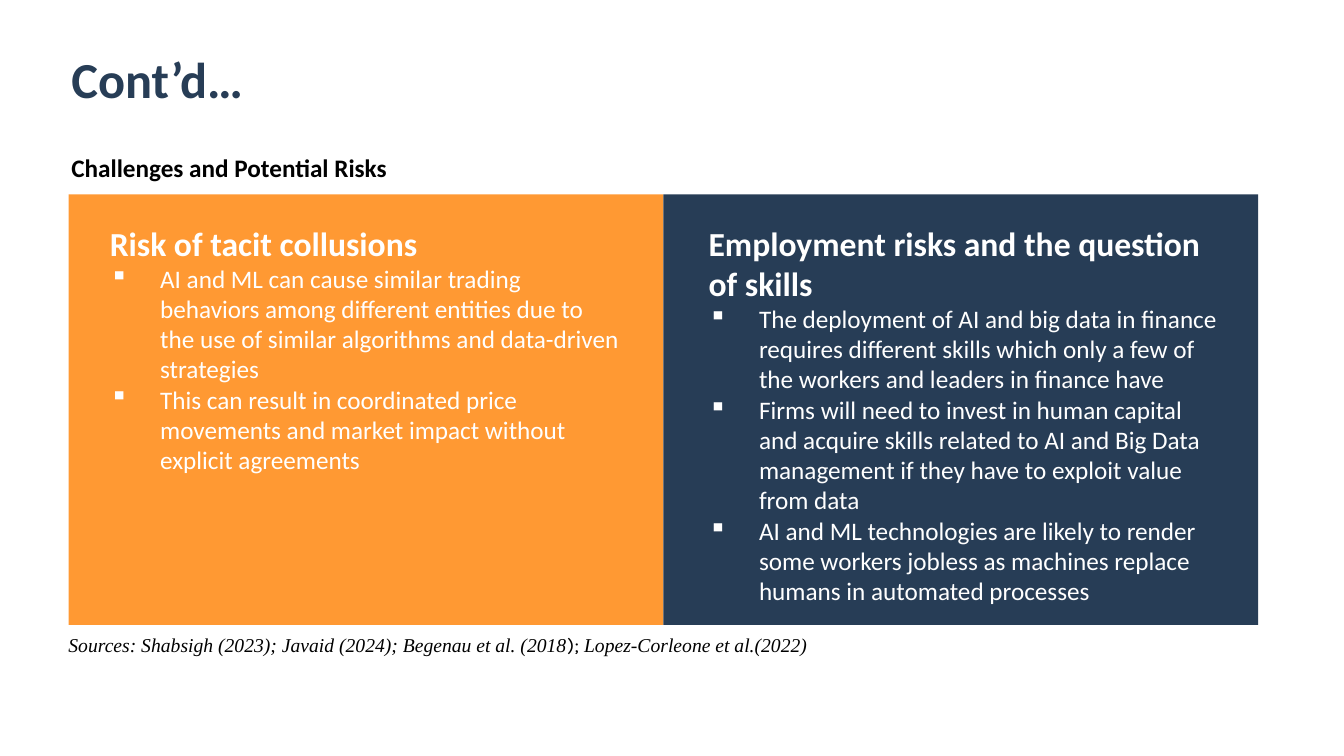
import pptx
import pptx.dml.color
import pptx.enum.shapes
import pptx.enum.text
import pptx.oxml.ns
import pptx.util
from lxml import etree

Inches = pptx.util.Inches

COLORS = {"navy": "273D56", "orange": "FF9933", "white": "FFFFFF", "black": "000000"}

TITLE = "Cont’d…"
SUBTITLE = "Challenges and Potential Risks"
PANELS = [
    {
        "fill": "orange",
        "text_box": (0.99, 2.16, 5.25, 2.63),
        "heading": "Risk of tacit collusions",
        "bullets": [
            "AI and ML can cause similar trading behaviors among different entities due to the use of similar algorithms and data-driven strategies",
            "This can result in coordinated price movements and market impact without explicit agreements",
        ],
    },
    {
        "fill": "navy",
        "text_box": (6.93, 2.16, 5.27, 3.94),
        "heading": "Employment risks and the question of skills",
        "bullets": [
            "The deployment of AI and big data in finance requires different skills which only a few of the workers and leaders in finance have",
            "Firms will need to invest in human capital and acquire skills related to AI and Big Data management if they have to exploit value from data",
            "AI and ML technologies are likely to render some workers jobless as machines replace humans in automated processes",
        ],
    },
]
SOURCES = [
    ("Sources: Shabsigh (2023); Javaid (2024); Begenau et al. (2018", "Times New Roman", True),
    ("); ", "Karla", False),
    ("Lopez-Corleone et al.(2022)", "Times New Roman", True),
]
PANEL_LEFT, PANEL_TOP, PANEL_WIDTH, PANEL_HEIGHT = 0.68, 1.93, 5.9, 4.27


def color(name):
    return pptx.dml.color.RGBColor.from_string(COLORS[name])


def set_font(font, size, color_name, bold=False, name="Calibri", italic=False):
    font.name = name
    font.size = pptx.util.Pt(size)
    font.bold = bold
    font.italic = italic
    font.color.rgb = color(color_name)


def add_text_frame(slide, box):
    frame = slide.shapes.add_textbox(*map(Inches, box)).text_frame
    frame.word_wrap = True
    return frame


def add_panel(slide, index, fill):
    shape = slide.shapes.add_shape(
        pptx.enum.shapes.MSO_SHAPE.RECTANGLE,
        Inches(PANEL_LEFT + index * PANEL_WIDTH), Inches(PANEL_TOP),
        Inches(PANEL_WIDTH), Inches(PANEL_HEIGHT),
    )
    shape.shadow.inherit = False
    shape.fill.solid()
    shape.fill.fore_color.rgb = color(fill)
    shape.line.fill.background()


def add_bullet(frame, text):
    paragraph = frame.add_paragraph()
    paragraph.text = text
    properties = paragraph._p.get_or_add_pPr()
    properties.set("marL", str(Inches(0.5)))
    properties.set("indent", str(Inches(-0.5)))
    etree.SubElement(properties, pptx.oxml.ns.qn("a:buChar")).set("char", "▪")
    set_font(paragraph.font, 18, "white")


def main():
    presentation = pptx.Presentation()
    presentation.slide_width = Inches(13.33)
    presentation.slide_height = Inches(7.5)
    slide = presentation.slides.add_slide(presentation.slide_layouts[6])

    for index, panel in enumerate(PANELS):
        add_panel(slide, index, panel["fill"])

    title_frame = add_text_frame(slide, (0.61, 0.41, 10.64, 0.82))
    title_frame.vertical_anchor = pptx.enum.text.MSO_ANCHOR.MIDDLE
    title = title_frame.paragraphs[0]
    title.text = TITLE
    title.line_spacing = 0.9
    set_font(title.font, 36, "navy", bold=True)

    subtitle = add_text_frame(slide, (0.61, 1.46, 5.46, 0.53)).paragraphs[0]
    subtitle.text = SUBTITLE
    set_font(subtitle.font, 18, "black", bold=True)

    sources = add_text_frame(slide, (0.58, 6.23, 11.81, 0.34)).paragraphs[0]
    for text, font_name, italic in SOURCES:
        run = sources.add_run()
        run.text = text
        set_font(run.font, 14, "black", name=font_name, italic=italic)

    for panel in PANELS:
        frame = add_text_frame(slide, panel["text_box"])
        heading = frame.paragraphs[0]
        heading.text = panel["heading"]
        set_font(heading.font, 24, "white", bold=True)
        for bullet in panel["bullets"]:
            add_bullet(frame, bullet)

    presentation.save("out.pptx")


if __name__ == "__main__":
    main()
